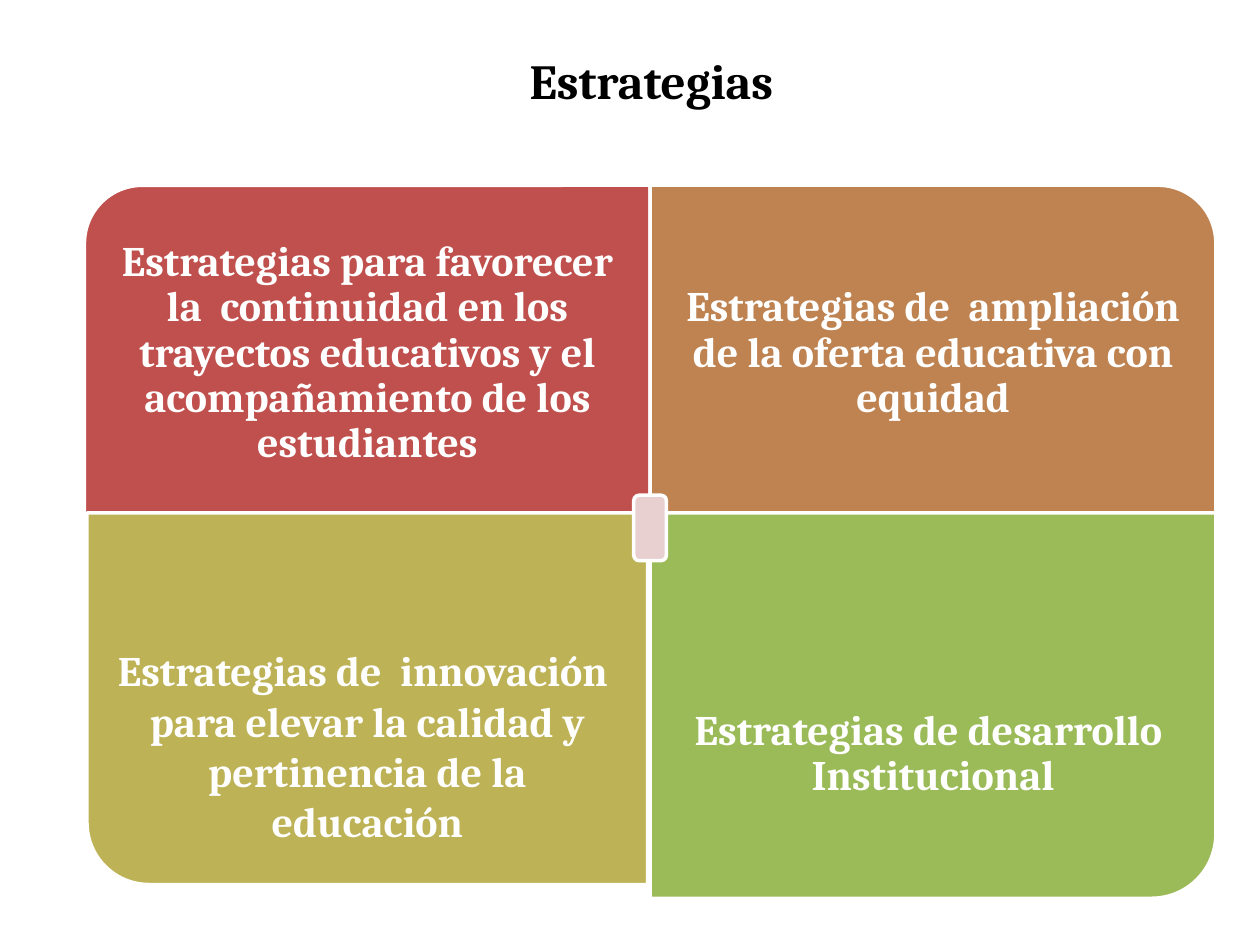
from dataclasses import dataclass

from pptx import Presentation
from pptx.dml.color import RGBColor
from pptx.enum.shapes import MSO_SHAPE
from pptx.enum.text import MSO_ANCHOR, PP_ALIGN
from pptx.util import Inches, Pt

ROUND_ONE = MSO_SHAPE.ROUND_1_RECTANGLE
ROUND_ALL = MSO_SHAPE.ROUNDED_RECTANGLE
MIDDLE = MSO_ANCHOR.MIDDLE
CENTER = PP_ALIGN.CENTER

FONT = "Cambria"
BLACK = RGBColor(0x00, 0x00, 0x00)
WHITE = RGBColor(0xFF, 0xFF, 0xFF)
RED = RGBColor(0xC0, 0x50, 0x4D)
BROWN = RGBColor(0xBE, 0x83, 0x51)
OLIVE = RGBColor(0xBD, 0xB2, 0x55)
GREEN = RGBColor(0x9B, 0xBB, 0x59)
PINK = RGBColor(0xE8, 0xD0, 0xD0)

TEXT_SHARE = 0.75  # part of a panel's height given to its text


@dataclass(frozen=True)
class Panel:
    """A quadrant as it appears, after its quarter turns."""
    left: float
    top: float
    width: float
    height: float
    rotation: int
    color: RGBColor
    lines: tuple[str, ...]
    text_offset: float
    inset: float
    line_spacing: float = 0.9


PANELS = (
    Panel(0.67, 1.47, 4.49, 2.76, 270, RED,
          ("Estrategias para favorecer la  continuidad en los trayectos "
           "educativos y el acompañamiento de los estudiantes",), 0.3, 0.22),
    Panel(5.16, 1.47, 4.49, 2.76, 0, BROWN,
          ("Estrategias de  ampliación de la oferta educativa con equidad",),
          0.3, 0.22),
    Panel(0.69, 4.07, 4.45, 2.95, 180, OLIVE,
          ("Estrategias de  innovación ",
           "para elevar la calidad y pertinencia de la educación"),
          0.74, 0.19, 1.0),
    Panel(5.16, 4.07, 4.49, 3.06, 90, GREEN,
          ("Estrategias de desarrollo  Institucional",), 0.77, 0.19),
)


def format_paragraph(paragraph, size: int, color: RGBColor) -> None:
    paragraph.alignment = CENTER
    font = paragraph.font
    font.name, font.size, font.bold = FONT, Pt(size), True
    font.color.rgb = color


def add_block(slide, kind, left: float, top: float, width: float,
              height: float, color: RGBColor):
    shape = slide.shapes.add_shape(
        kind, Inches(left), Inches(top), Inches(width), Inches(height))
    shape.shadow.inherit = False
    shape.fill.solid()
    shape.fill.fore_color.rgb = color
    shape.line.color.rgb = WHITE
    shape.line.width = Pt(2)
    return shape


def add_panel(slide, panel: Panel) -> None:
    # A sideways shape swaps its sides around the same centre
    width, height = panel.width, panel.height
    if panel.rotation % 180:
        width, height = height, width
    left = panel.left + (panel.width - width) / 2
    top = panel.top + (panel.height - height) / 2
    shape = add_block(slide, ROUND_ONE, left, top, width, height, panel.color)
    shape.rotation = panel.rotation

    # Upright text over the panel
    text_box = slide.shapes.add_textbox(
        Inches(panel.left), Inches(panel.top + panel.text_offset),
        Inches(panel.width), Inches(panel.height * TEXT_SHARE))
    frame = text_box.text_frame
    frame.word_wrap = True
    frame.vertical_anchor = MIDDLE
    frame.margin_left = frame.margin_right = Inches(panel.inset)
    frame.margin_top = frame.margin_bottom = Inches(panel.inset)
    frame.text = "\n".join(panel.lines)
    for paragraph in frame.paragraphs:
        format_paragraph(paragraph, 24, WHITE)
        paragraph.line_spacing = panel.line_spacing


def main() -> None:
    presentation = Presentation()
    presentation.slide_width = Inches(10)
    presentation.slide_height = Inches(7.5)
    slide = presentation.slides.add_slide(presentation.slide_layouts[5])

    # Title
    title = slide.shapes.title
    title.left, title.top = Inches(0.67), Inches(0.01)
    title.width, title.height = Inches(9), Inches(1.25)
    title.text_frame.text = "Estrategias"
    title.text_frame.vertical_anchor = MIDDLE
    format_paragraph(title.text_frame.paragraphs[0], 28, BLACK)

    # Four strategies around a central marker
    for panel in PANELS:
        add_panel(slide, panel)
    add_block(slide, ROUND_ALL, 5.03, 3.93, 0.26, 0.52, PINK)

    presentation.save("out.pptx")


if __name__ == "__main__":
    main()
